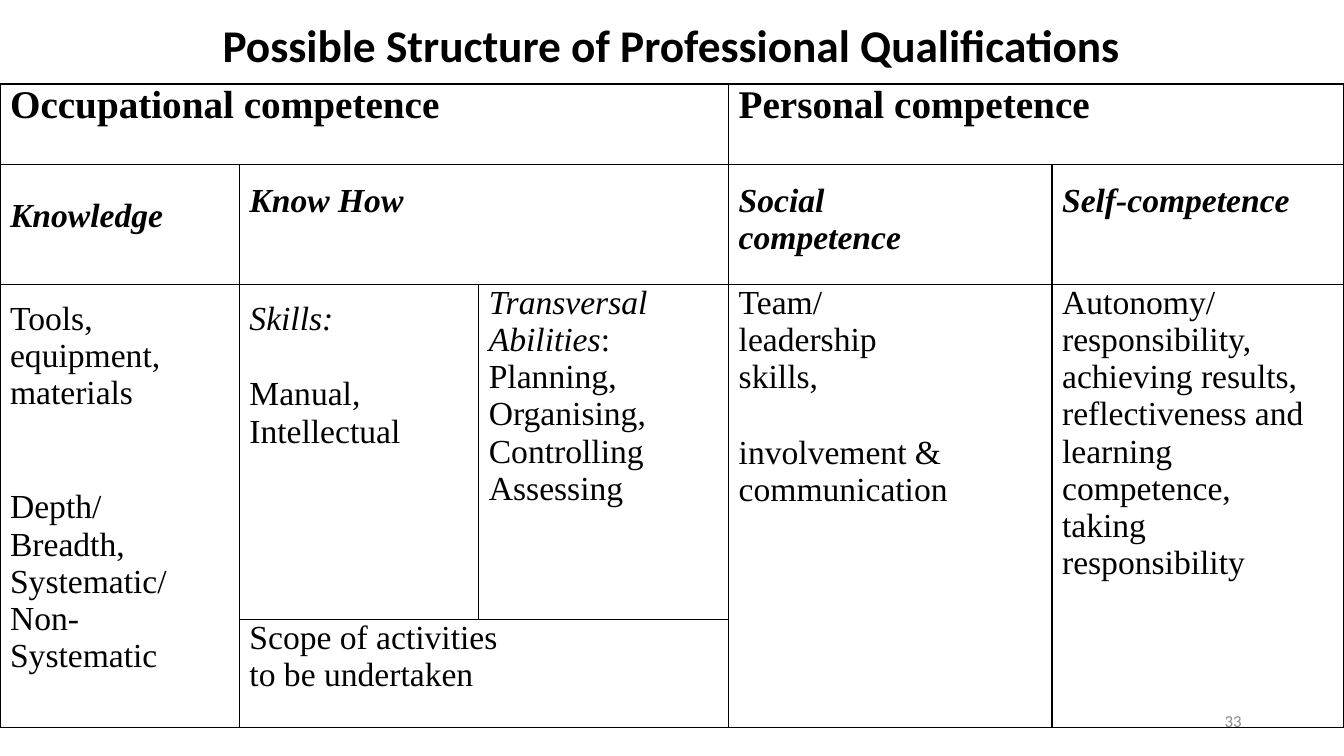
from lxml import etree
from pptx import Presentation
from pptx.dml.color import RGBColor
from pptx.enum.text import MSO_ANCHOR, PP_ALIGN
from pptx.oxml.ns import qn
from pptx.util import Emu, Pt

CENTER, RIGHT = PP_ALIGN.CENTER, PP_ALIGN.RIGHT
MIDDLE = MSO_ANCHOR.MIDDLE
PX = 9525
BLACK, GREY = "000000", "898989"
HEADING, BODY = "Calibri", "Times New Roman"
COLUMNS = [228, 228, 238, 308, 278]
ROWS = [77, 114, 319, 103]
BLANK_LINE = 27.6


def px(length):
    """Turn pixels into EMU."""
    return Emu(length * PX)


def color(value):
    """Turn a hex string into a colour."""
    return RGBColor.from_string(value)


def set_font(paragraph, name, size, ink, bold=False, italic=False):
    """Set the font that all runs of a paragraph share."""
    font = paragraph.font
    font.name, font.size, font.bold, font.italic = name, Pt(size), bold, italic
    font.color.rgb = color(ink)


def add_label(slide, box, text, size, ink, align, bold=False):
    """Place one line of text, centred vertically in its box."""
    frame = slide.shapes.add_textbox(*map(px, box)).text_frame
    frame.word_wrap = True
    frame.vertical_anchor = MIDDLE
    frame.margin_top = frame.margin_bottom = 0
    line = frame.paragraphs[0]
    line.text, line.alignment = text, align
    set_font(line, HEADING, size, ink, bold)


def add_borders(cell):
    """Draw a thin black line on each side of a cell."""
    properties = cell._tc.get_or_add_tcPr()
    for position, side in enumerate(("lnL", "lnR", "lnT", "lnB")):
        border = etree.Element(qn(f"a:{side}"), w=str(Pt(1)))
        fill = etree.SubElement(border, qn("a:solidFill"))
        etree.SubElement(fill, qn("a:srgbClr"), val=BLACK)
        properties.insert(position, border)


def fill_cell(cell, lines, top=0, size=24, bold=False, italic=False, italic_words=(), gaps=None):
    """Write lines into a cell, with gaps counted in blank lines before a line."""
    cell.margin_top = px(top)
    frame = cell.text_frame
    for number, text in enumerate(lines):
        line = frame.paragraphs[0] if number == 0 else frame.add_paragraph()
        word = text.rstrip(":") if text not in italic_words else text
        if word in italic_words and word != text:
            line.add_run().text = word
            line.add_run().text = text[len(word):]
            line.runs[0].font.italic = True
            set_font(line, BODY, size, BLACK, bold)
        else:
            line.add_run().text = text
            set_font(line, BODY, size, BLACK, bold, italic or text in italic_words)
        if gaps and text in gaps:
            line.space_before = Pt(gaps[text] * BLANK_LINE)


def add_competence_table(slide, left, top):
    """Build the table of competences from its top left corner."""
    box = map(px, (left, top, sum(COLUMNS), sum(ROWS)))
    table = slide.shapes.add_table(len(ROWS), len(COLUMNS), *box).table
    table.first_row = table.horz_banding = False
    for column, width in zip(table.columns, COLUMNS):
        column.width = px(width)
    for row, height in zip(table.rows, ROWS):
        row.height = px(height)
    for cell in table.iter_cells():
        cell.margin_top = cell.margin_bottom = 0
        cell.fill.background()
        add_borders(cell)
    merges = [((0, 0), (0, 2)), ((0, 3), (0, 4)), ((1, 1), (1, 2)), ((2, 0), (3, 0)),
              ((2, 3), (3, 3)), ((2, 4), (3, 4)), ((3, 1), (3, 2))]
    for first, last in merges:
        table.cell(*first).merge(table.cell(*last))

    for column, group in ((0, "Occupational competence"), (3, "Personal competence")):
        fill_cell(table.cell(0, column), [group], size=28, bold=True)
    headings = [(0, 31, ["Knowledge"]), (1, 17, ["Know How"]),
                (3, 17, ["Social", "competence"]), (4, 17, ["Self-competence"])]
    for column, inset, heading in headings:
        fill_cell(table.cell(1, column), heading, inset, bold=True, italic=True)

    fill_cell(table.cell(2, 0),
              ["Tools,", "equipment,", "materials", "Depth/", "Breadth,", "Systematic/", "Non-",
               "Systematic"], 15, gaps={"Depth/": 2})
    fill_cell(table.cell(2, 1), ["Skills:", "Manual,", "Intellectual"], 15,
              italic_words=["Skills:"], gaps={"Manual,": 1})
    fill_cell(table.cell(2, 2),
              ["Transversal", "Abilities:", "Planning,", "Organising,", "Controlling", "Assessing"],
              italic_words=["Transversal", "Abilities"])
    fill_cell(table.cell(2, 3),
              ["Team/", "leadership", "skills,", "involvement & communication"],
              gaps={"involvement & communication": 1})
    fill_cell(table.cell(2, 4),
              ["Autonomy/", "responsibility,", "achieving results,", "reflectiveness and",
               "learning competence,", "taking responsibility"])
    fill_cell(table.cell(3, 1), ["Scope of activities", "to be undertaken"])


def main():
    """Build the slide and save it."""
    deck = Presentation()
    deck.slide_width, deck.slide_height = px(1280), px(720)
    slide = deck.slides.add_slide(deck.slide_layouts[6])
    add_label(slide, (65, 20, 1149, 45), "Possible Structure of Professional Qualifications",
              32.4, BLACK, CENTER, bold=True)
    add_competence_table(slide, 0, 80)
    add_label(slide, (904, 667, 288, 38), "33", 12, GREY, RIGHT)
    deck.save("out.pptx")


if __name__ == "__main__":
    main()
